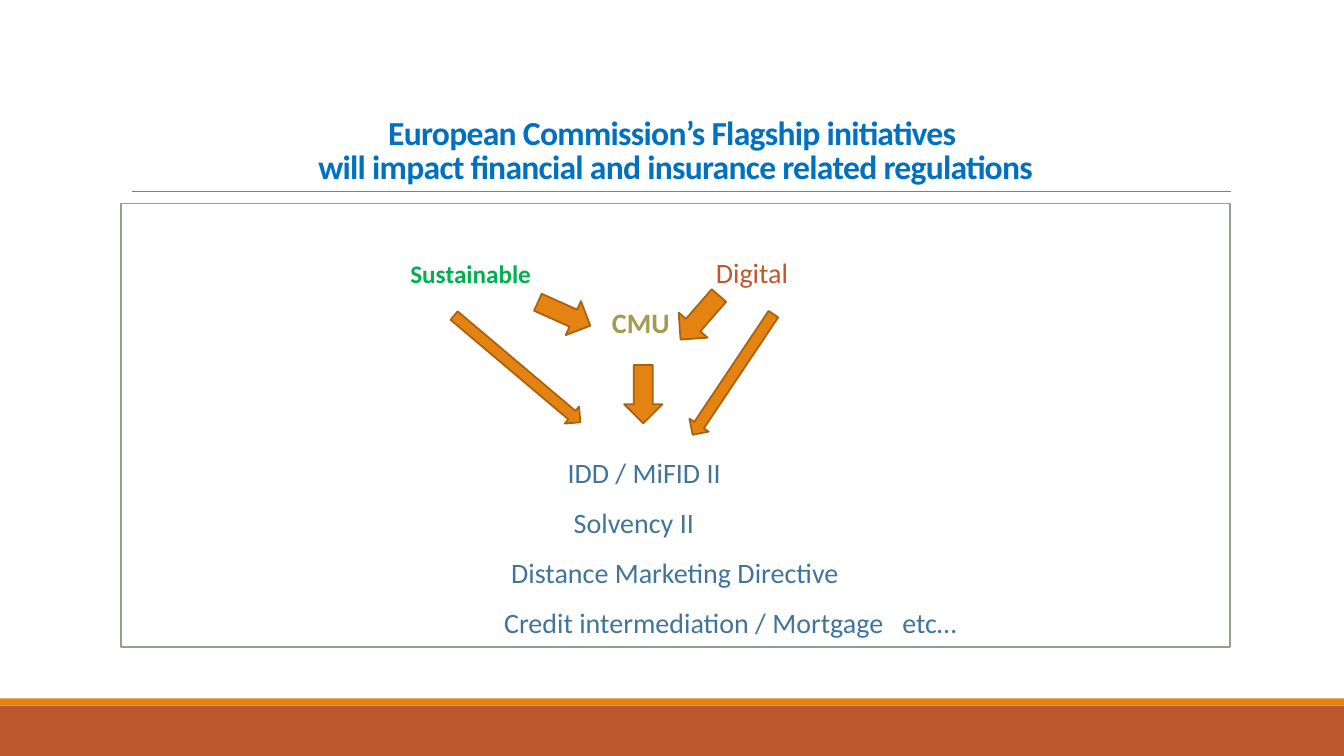
from lxml.etree import SubElement
from pptx import Presentation
from pptx.dml.color import RGBColor
from pptx.enum.shapes import MSO_CONNECTOR, MSO_SHAPE
from pptx.enum.text import MSO_ANCHOR, PP_ALIGN
from pptx.oxml.ns import qn
from pptx.util import Inches, Pt

ORANGE, RUST, BLUE = "E48312", "BD582C", "40749B"
PANEL_LEFT, PANEL_TOP, PANEL_WIDTH, PANEL_HEIGHT = 1.2, 2.02, 11, 4.4
ROW_PITCH = 36  # points from one text row to the next

# Each row: extra rows skipped above it, then (left on slide, text, size, colour, bold)
ROWS = [
    (0, [(4.07, "Sustainable", 18, "00B050", True), (7.1, "Digital", 20, RUST, False)]),
    (0, [(6.07, "CMU", 20, "A39B4E", True)]),
    (2, [(5.63, "IDD / MiFID II", 20, BLUE, False)]),
    (0, [(5.69, "Solvency II", 20, BLUE, False)]),
    (0, [(5.07, "Distance Marketing Directive", 20, BLUE, False)]),
    (0, [(5.0, "Credit intermediation / Mortgage   etc…", 20, BLUE, False)]),
]

# left, top, width, height, rotation
ARROWS = [
    (5.31, 2.93, 0.57, 0.37, 24.1),
    (6.55, 3.6, 1.44, 0.23, 123.8),
    (6.09, 3.72, 0.58, 0.38, 90),
    (6.65, 2.96, 0.58, 0.38, 131),
    (4.31, 3.55, 1.64, 0.22, 40.2),
]


def color(value):
    return RGBColor.from_string(value)


class SlideBuilder:
    font = "Calibri"

    def __init__(self, slide):
        self.slide = slide

    def shape(self, kind, left, top, width, height, fill, line=None, rotation=0):
        shape = self.slide.shapes.add_shape(
            kind, Inches(left), Inches(top), Inches(width), Inches(height))
        shape.shadow.inherit = False
        shape.rotation = rotation
        shape.fill.solid()
        shape.fill.fore_color.rgb = color(fill)
        if line:
            shape.line.color.rgb = color(line)
            shape.line.width = Pt(1.25)
        else:
            shape.line.fill.background()
        return shape

    def rule(self, left, right, top):
        connector = self.slide.shapes.add_connector(
            MSO_CONNECTOR.STRAIGHT, Inches(left), Inches(top), Inches(right), Inches(top))
        connector.line.color.rgb = color("808080")
        connector.line.width = Pt(0.5)
        SubElement(connector._element.spPr, qn("a:effectLst"))

    def run(self, paragraph, text, size, fill, bold):
        run = paragraph.add_run()
        run.text = text
        run.font.name = self.font
        run.font.size = Pt(size)
        run.font.bold = bold
        run.font.color.rgb = color(fill)
        return run

    def title(self, lines, left, top, width, height):
        box = self.slide.shapes.add_textbox(
            Inches(left), Inches(top), Inches(width), Inches(height))
        frame = box.text_frame
        frame.word_wrap = True
        frame.vertical_anchor = MSO_ANCHOR.BOTTOM
        paragraph = frame.paragraphs[0]
        paragraph.alignment = PP_ALIGN.CENTER
        paragraph.line_spacing = 0.85
        for index, line in enumerate(lines):
            if index:
                paragraph.add_line_break()
            run = self.run(paragraph, line, 24, "0070C0", True)
            run.font._element.set("spc", "-50")

    def panel(self, rows):
        """Draw the framed box and set its labels at tab stops."""
        panel = self.shape(MSO_SHAPE.RECTANGLE, PANEL_LEFT, PANEL_TOP,
                           PANEL_WIDTH, PANEL_HEIGHT, "FFFFFF", "94A088")
        frame = panel.text_frame
        frame.word_wrap = True
        frame.vertical_anchor = MSO_ANCHOR.TOP
        frame.margin_left = frame.margin_right = 0
        frame.margin_top, frame.margin_bottom = Inches(0.55), Inches(0.05)
        for index, (skipped, labels) in enumerate(rows):
            paragraph = frame.add_paragraph() if index else frame.paragraphs[0]
            paragraph.alignment = PP_ALIGN.LEFT
            paragraph.line_spacing = 0.9
            paragraph.space_before = Pt(12 + skipped * ROW_PITCH if index else 0)
            paragraph.space_after = Pt(2)
            tabs = SubElement(paragraph._p.get_or_add_pPr(), qn("a:tabLst"))
            for left, text, size, fill, bold in labels:
                SubElement(tabs, qn("a:tab"), pos=str(Inches(left - PANEL_LEFT)), algn="l")
                self.run(paragraph, "\t" + text, size, fill, bold)

    def arrow(self, left, top, width, height, rotation):
        self.shape(MSO_SHAPE.RIGHT_ARROW, left, top, width, height,
                   ORANGE, "A9610D", rotation)


def main():
    presentation = Presentation()
    presentation.slide_width, presentation.slide_height = Inches(13.33), Inches(7.5)
    builder = SlideBuilder(presentation.slides.add_slide(presentation.slide_layouts[6]))
    builder.shape(MSO_SHAPE.RECTANGLE, 0, 7, 13.33, 0.5, RUST)
    builder.shape(MSO_SHAPE.RECTANGLE, 0, 6.93, 13.33, 0.07, ORANGE)
    builder.rule(1.31, 12.21, 1.9)
    builder.title(["European Commission’s Flagship initiatives ",
                   "will impact financial and insurance related regulations"],
                  PANEL_LEFT, 0.31, PANEL_WIDTH, 1.59)
    builder.panel(ROWS)
    for arrow in ARROWS:
        builder.arrow(*arrow)
    presentation.save("out.pptx")


if __name__ == "__main__":
    main()
